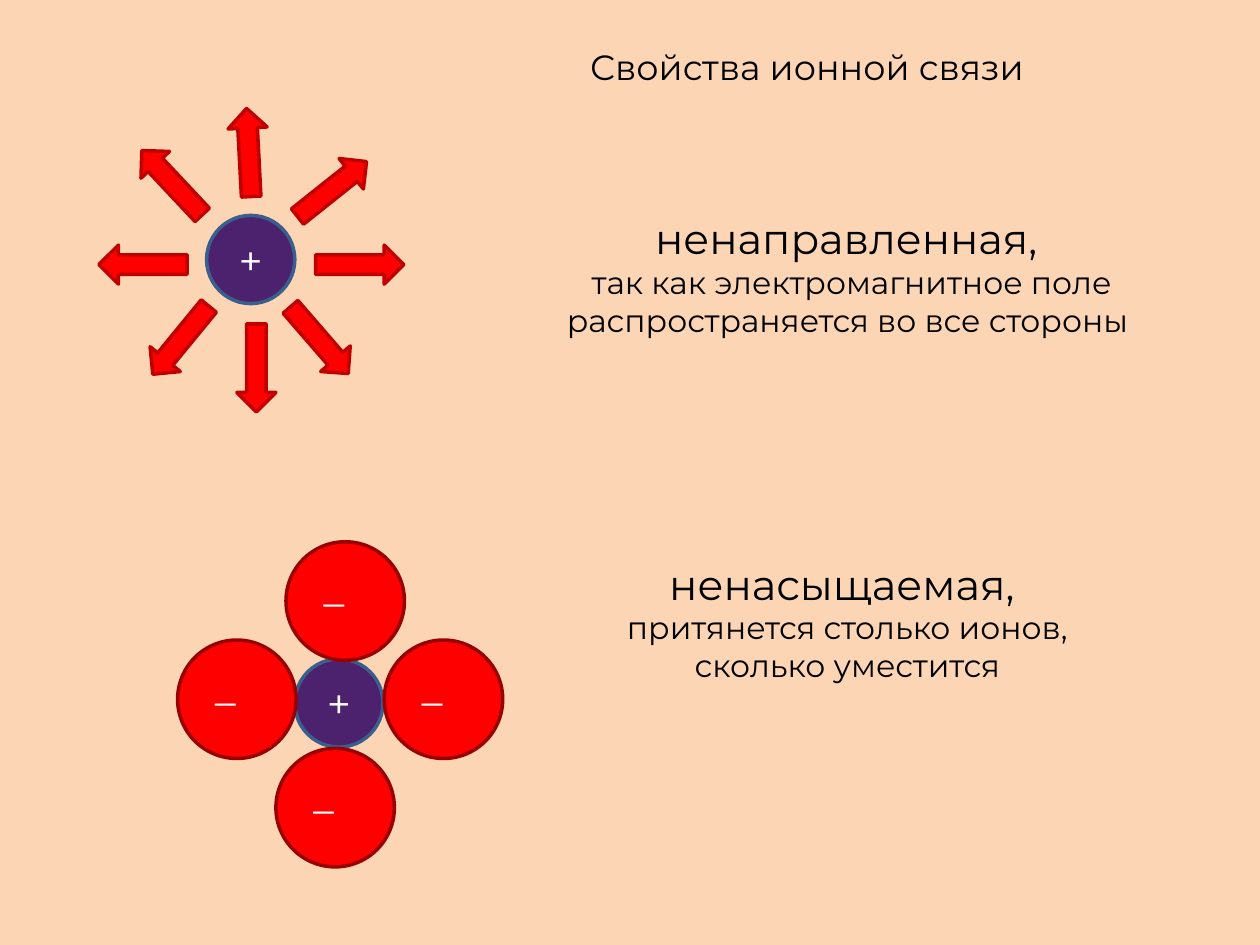
import pptx
import pptx.util
import pptx.dml.color
import pptx.enum.shapes
import pptx.enum.text

Inches = pptx.util.Inches
SHAPE = pptx.enum.shapes.MSO_SHAPE
FONT = "Montserrat"

CATION = {"fill": "4C216D", "line": "3A5F8C"}
ANION = {"fill": "FF0000", "line": "990000"}
ARROW = {"fill": "FF0000", "line": "C00000"}

CATION_SIZE = 0.7
ANION_SIZE = 0.94
ARROW_SIZE = (0.31, 0.7)

# left, top, rotation of each arrow around the cation
FIELD_ARROWS = [
    (1.88, 2.57, 0),
    (2.7, 1.75, 270),
    (2.38, 2.35, 319.1),
    (0.98, 1.75, 90),
    (1.28, 2.35, 39.4),
    (1.82, 0.86, 177),
    (2.48, 1.15, 231.5),
    (1.21, 1.1, 136.8),
]
ANION_CORNERS = [(3.05, 5.08), (2.19, 5.94), (1.41, 5.08), (2.27, 4.3)]


def rgb(value):
    return pptx.dml.color.RGBColor.from_string(value)


def write_line(paragraph, text, size, color):
    paragraph.alignment = pptx.enum.text.PP_ALIGN.CENTER
    run = paragraph.add_run()
    run.text = text
    for name, value in {"name": FONT, "size": pptx.util.Pt(size)}.items():
        setattr(run.font, name, value)
    run.font.color.rgb = rgb(color)


def add_figure(group, kind, left, top, width, height, colors):
    figure = group.shapes.add_shape(
        kind, Inches(left), Inches(top), Inches(width), Inches(height))
    figure.shadow.inherit = False
    figure.fill.solid()
    figure.fill.fore_color.rgb = rgb(colors["fill"])
    figure.line.color.rgb = rgb(colors["line"])
    figure.line.width = pptx.util.Pt(2)
    return figure


def add_ion(group, left, top, size, charge, colors, right_inset=0.1):
    """A larger right inset moves the charge sign left of the centre."""
    ion = add_figure(group, SHAPE.OVAL, left, top, size, size, colors)
    frame = ion.text_frame
    frame.margin_right = Inches(right_inset)
    frame.vertical_anchor = pptx.enum.text.MSO_ANCHOR.MIDDLE
    write_line(frame.paragraphs[0], charge, 24, "FFFFFF")


def add_caption(slide, left, top, width, height, lines):
    caption = slide.shapes.add_textbox(
        Inches(left), Inches(top), Inches(width), Inches(height))
    frame = caption.text_frame
    frame.word_wrap = True
    for index, (text, size) in enumerate(lines):
        paragraph = frame.add_paragraph() if index else frame.paragraphs[0]
        write_line(paragraph, text, size, "000000")


def add_field_diagram(slide):
    group = slide.shapes.add_group_shape()
    add_ion(group, 1.64, 1.71, CATION_SIZE, "+", CATION)
    for left, top, rotation in FIELD_ARROWS:
        arrow = add_figure(group, SHAPE.DOWN_ARROW, left, top, *ARROW_SIZE, ARROW)
        arrow.rotation = rotation


def add_packing_diagram(slide):
    group = slide.shapes.add_group_shape()
    add_ion(group, 2.34, 5.23, CATION_SIZE, "+", CATION)
    for left, top in ANION_CORNERS:
        add_ion(group, left, top, ANION_SIZE, "–", ANION, right_inset=0.28)


def main():
    deck = pptx.Presentation()
    deck.slide_width, deck.slide_height = Inches(10), Inches(7.5)
    slide = deck.slides.add_slide(deck.slide_layouts[6])
    slide.background.fill.solid()
    slide.background.fill.fore_color.rgb = rgb("FCD5B5")

    add_caption(slide, 3.67, 0.31, 5.47, 0.44, [("Свойства ионной связи", 20)])
    add_field_diagram(slide)
    add_caption(slide, 3.91, 1.64, 5.7, 1.11, [
        ("ненаправленная, ", 24),
        ("так как электромагнитное поле распространяется во все стороны ", 18),
    ])
    add_packing_diagram(slide)
    add_caption(slide, 4.38, 4.38, 4.69, 1.11, [
        ("ненасыщаемая, ", 24),
        ("притянется столько ионов, сколько уместится", 18),
    ])
    deck.save("out.pptx")


if __name__ == "__main__":
    main()
